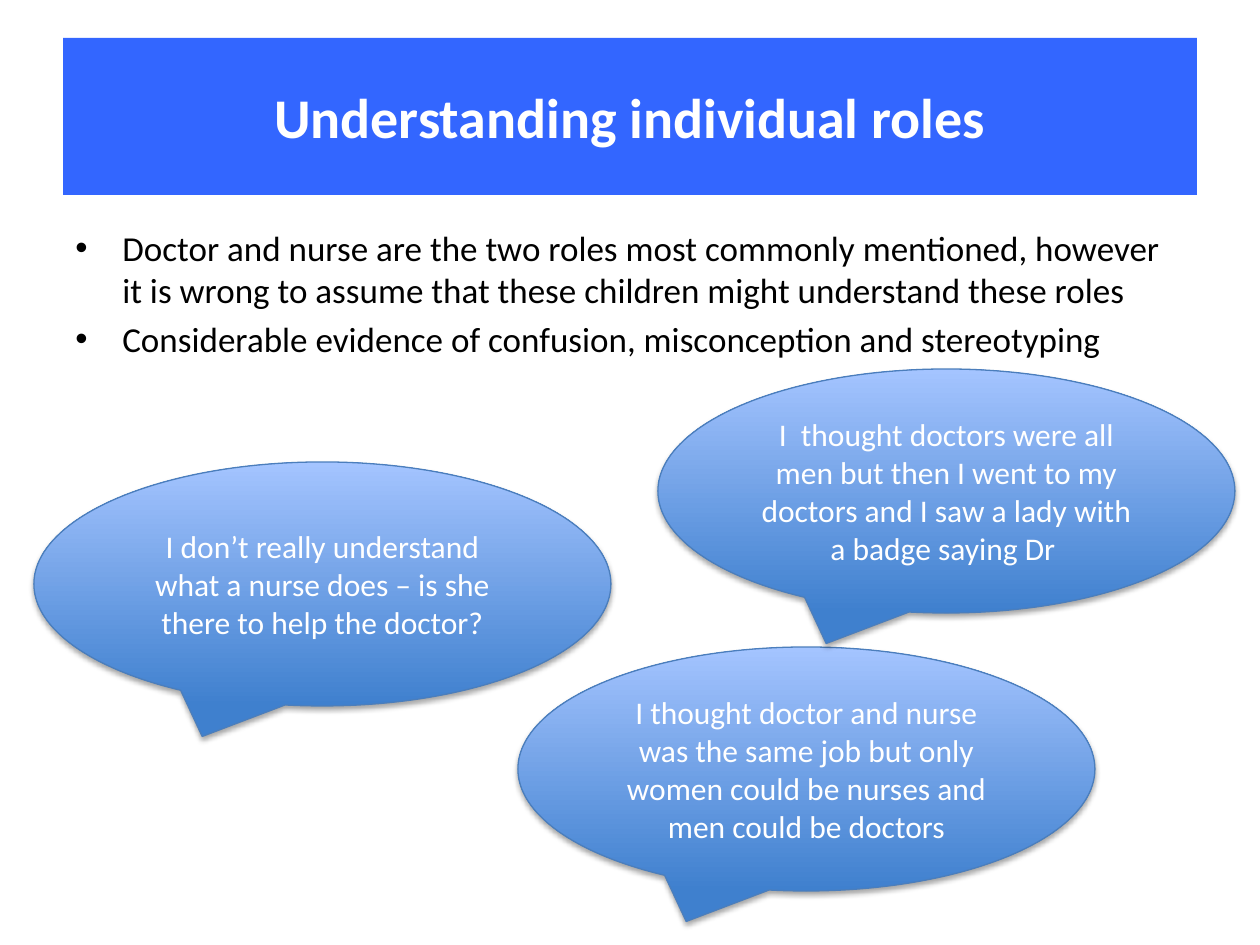
from dataclasses import dataclass

from lxml.etree import SubElement
from pptx import Presentation
from pptx.dml.color import RGBColor
from pptx.enum.shapes import MSO_SHAPE as Shape
from pptx.enum.text import MSO_ANCHOR as Anchor, PP_ALIGN as Align
from pptx.oxml.ns import qn
from pptx.util import Pt

EMU_PER_PX = 914400 / 126
CALLOUT_W, CALLOUT_H = 577, 244
INDENT = 47


@dataclass
class Callout:
    x: int
    y: int
    text: str


BULLETS = [
    "Doctor and nurse are the two roles most commonly mentioned, however "
    "it is wrong to assume that these children might understand these roles",
    "Considerable evidence of confusion, misconception and stereotyping",
]
CALLOUTS = [
    Callout(34, 462, "I don’t really understand what a nurse does – is she "
                     "there to help the doctor?"),
    Callout(518, 647, "I thought doctor and nurse was the same job but only "
                      "women could be nurses and men could be doctors"),
    Callout(658, 369, "I  thought doctors were all men but then I went to my "
                      "doctors and I saw a lady with a badge saying Dr "),
]


def px(n: int) -> int:
    return round(n * EMU_PER_PX)


def color(value: str) -> RGBColor:
    return RGBColor.from_string(value)


def write(p, text: str, *, size: int, fill: str = "FFFFFF",
          bold: bool = False, align: Align = Align.CENTER) -> None:
    p.alignment = align
    r = p.add_run()
    r.text = text
    r.font.name = "Calibri"
    r.font.size = Pt(size)
    r.font.bold = bold
    r.font.color.rgb = color(fill)


def draw_title(slide, text: str) -> None:
    s = slide.shapes.title
    s.left, s.top, s.width, s.height = map(px, (63, 38, 1134, 157))
    s.fill.solid()
    s.fill.fore_color.rgb = color("3366FF")
    tf = s.text_frame
    tf.vertical_anchor = Anchor.MIDDLE
    write(tf.paragraphs[0], text, size=32, bold=True)


def draw_bullets(slide, items: list[str]) -> None:
    s = slide.shapes.add_textbox(*map(px, (63, 220, 1134, 624)))
    tf = s.text_frame
    tf.word_wrap = True
    for i, text in enumerate(items):
        p = tf.add_paragraph() if i else tf.paragraphs[0]
        write(p, text, size=20, fill="000000", align=Align.LEFT)
        p.space_before = Pt(4)
        pPr = p._p.get_or_add_pPr()
        pPr.set("marL", str(px(INDENT)))
        pPr.set("indent", str(-px(INDENT)))
        SubElement(pPr, qn("a:buFont"), typeface="Arial")
        SubElement(pPr, qn("a:buChar"), char="•")


def add_shadow(s) -> None:
    s.shadow.inherit = False
    effects = s._element.spPr.find(qn("a:effectLst"))
    shadow = SubElement(effects, qn("a:outerShdw"), blurRad=str(Pt(3.1)),
                        dist=str(Pt(1.8)), dir="5400000", rotWithShape="0")
    black = SubElement(shadow, qn("a:srgbClr"), val="000000")
    SubElement(black, qn("a:alpha"), val="35000")


def draw_callout(slide, callout: Callout) -> None:
    box = map(px, (callout.x, callout.y, CALLOUT_W, CALLOUT_H))
    s = slide.shapes.add_shape(Shape.OVAL_CALLOUT, *box)
    s.fill.gradient()
    s.fill.gradient_angle = 90
    for stop, position, value in zip(s.fill.gradient_stops, (0, 1),
                                     ("3F80CE", "A4C4FF")):
        stop.position = position
        stop.color.rgb = color(value)
    s.line.color.rgb = color("4B7EBC")
    s.line.width = Pt(0.75)
    add_shadow(s)
    tf = s.text_frame
    tf.word_wrap = True
    tf.vertical_anchor = Anchor.MIDDLE
    write(tf.paragraphs[0], callout.text, size=18)


def main() -> None:
    prs = Presentation()
    prs.slide_width, prs.slide_height = px(1260), px(945)
    slide = prs.slides.add_slide(prs.slide_layouts[5])
    draw_title(slide, "Understanding individual roles")
    draw_bullets(slide, BULLETS)
    for callout in CALLOUTS:
        draw_callout(slide, callout)
    prs.save("out.pptx")


if __name__ == "__main__":
    main()
